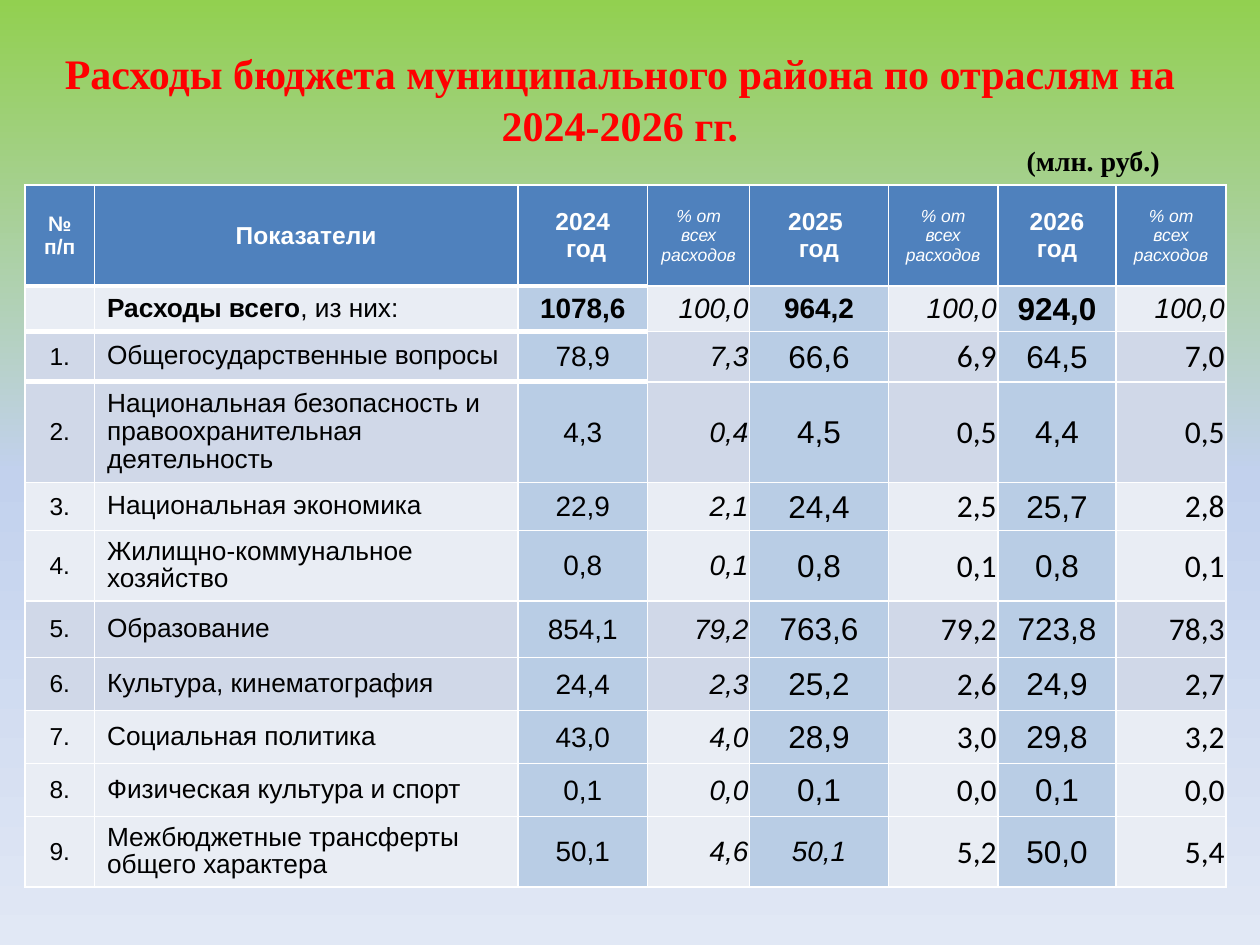
from dataclasses import dataclass
from copy import deepcopy

from lxml.etree import SubElement
from pptx import Presentation
from pptx.dml.color import RGBColor
from pptx.enum.text import MSO_ANCHOR as Anchor, PP_ALIGN as Align
from pptx.oxml.ns import qn
from pptx.util import Inches, Pt


@dataclass(frozen=True)
class Theme:
    sans: str = "Arial"
    serif: str = "Times New Roman"
    share_font: str = "Calibri"
    title: str = "FF0000"
    text: str = "000000"
    white: str = "FFFFFF"
    header: str = "4F81BD"
    year: str = "B9CDE5"
    light: str = "E9EDF4"
    dark: str = "D0D8E8"
    background: tuple = ((0, "92D050"), (0.5, "C2D1ED"), (1, "E1E8F5"))
    title_size: int = 24
    unit_size: int = 16
    number_head_size: int = 12
    head_size: int = 14
    share_head_size: int = 10
    number_size: int = 14
    name_size: int = 15
    value_size: int = 16
    large_size: int = 18


T = Theme()
COL_WIDTHS = [0.55, 3.36, 1.03, 0.81, 1.1, 0.87, 0.94, 0.87]
ROW_HEIGHTS = [0.8, 0.36, 0.4, 0.8, 0.38, 0.56, 0.45, 0.42, 0.42, 0.42, 0.56]
SHARE_HEAD = "% от всех расходов"
HEADER = ["№ п/п", "Показатели", "2024\n год", SHARE_HEAD,
          "2025 \nгод", SHARE_HEAD, "2026 год", SHARE_HEAD]
TOTAL = ["1078,6", "100,0", "964,2", "100,0", "924,0", "100,0"]
SECTORS = [
    ("Общегосударственные вопросы", "78,9", "7,3", "66,6", "6,9", "64,5", "7,0"),
    ("Национальная безопасность и правоохранительная деятельность",
     "4,3", "0,4", "4,5", "0,5", "4,4", "0,5"),
    ("Национальная экономика", "22,9", "2,1", "24,4", "2,5", "25,7", "2,8"),
    ("Жилищно-коммунальное хозяйство", "0,8", "0,1", "0,8", "0,1", "0,8", "0,1"),
    ("Образование", "854,1", "79,2", "763,6", "79,2", "723,8", "78,3"),
    ("Культура, кинематография", "24,4", "2,3", "25,2", "2,6", "24,9", "2,7"),
    ("Социальная политика", "43,0", "4,0", "28,9", "3,0", "29,8", "3,2"),
    ("Физическая культура и спорт", "0,1", "0,0", "0,1", "0,0", "0,1", "0,0"),
    ("Межбюджетные трансферты общего характера",
     "50,1", "4,6", "50,1", "5,2", "50,0", "5,4"),
]
DARK_ROWS = {2, 3, 6, 7}
THICK_EDGES = {1, 2, 3}  # rows whose top edge is thick
THICK_COLS = 3


def write(tf, text, size, font=T.sans, color=T.text, bold=False, italic=False,
          align=Align.LEFT, spacing=None, tail=""):
    """Fill a text frame, one paragraph a line; tail is a closing run that is not bold."""
    for i, line in enumerate(text.split("\n")):
        p = tf.add_paragraph() if i else tf.paragraphs[0]
        p.alignment = align
        if spacing:
            p.line_spacing = spacing
        for part, is_bold in ((line, bold), (tail, False)):
            if part:
                r = p.add_run()
                r.text = part
                r.font.name, r.font.size = font, Pt(size)
                r.font.bold, r.font.italic = is_bold, italic
                r.font.color.rgb = RGBColor.from_string(color)


def add_text(slide, text, left, top, width, height, **fmt):
    tf = slide.shapes.add_textbox(*map(Inches, (left, top, width, height))).text_frame
    tf.word_wrap = True
    write(tf, text, **fmt)


def paint_background(slide):
    fill = slide.background.fill
    fill.gradient()
    fill.gradient_angle = 270
    last = list(slide.element.iter(qn("a:gs")))[-1]
    last.addnext(deepcopy(last))
    for stop, (position, color) in zip(fill.gradient_stops, T.background):
        stop.position = position
        stop.color.rgb = RGBColor.from_string(color)


def set_borders(cell, top=1, bottom=1):
    tcPr = cell._tc.get_or_add_tcPr()
    for side, width in (("L", 1), ("R", 1), ("T", top), ("B", bottom)):
        ln = SubElement(tcPr, qn(f"a:ln{side}"), w=str(Pt(width)))
        SubElement(SubElement(ln, qn("a:solidFill")), qn("a:srgbClr"), val=T.white)


def style_cell(cell, row, col):
    thick = THICK_EDGES if col < THICK_COLS else ()
    set_borders(cell, 3 if row in thick else 1, 3 if row + 1 in thick else 1)
    is_year = col >= 2 and col % 2 == 0
    color = (T.header if row == 0 else T.year if is_year
             else T.dark if row in DARK_ROWS else T.light)
    cell.fill.solid()
    cell.fill.fore_color.rgb = RGBColor.from_string(color)
    cell.vertical_anchor = Anchor.MIDDLE
    if row and col != 1 and (col or row == 1):
        cell.margin_left = cell.margin_right = cell.margin_top = Inches(0.01)
        cell.margin_bottom = 0


def header_format(col):
    is_share = col >= 3 and col % 2
    size = (T.number_head_size if col == 0
            else T.share_head_size if is_share else T.head_size)
    return dict(size=size, color=T.white, bold=not is_share, italic=bool(is_share),
                align=Align.CENTER)


def value_format(row, col):
    is_share, is_total = col % 2 == 1, row == 1
    fmt = dict(size=T.large_size, align=Align.RIGHT if is_share else Align.CENTER)
    if is_total:
        fmt.update(size=T.large_size if col == 6 else T.value_size,
                   bold=not is_share, italic=is_share)
    elif col < 4:
        fmt.update(size=T.value_size, italic=is_share)
    elif (row, col) == (len(SECTORS) + 1, 4):
        fmt.update(size=T.value_size, italic=True)
    elif is_share:
        fmt.update(font=T.share_font)
    return fmt


def cell_format(row, col):
    if row == 0:
        return header_format(col)
    if col == 0:
        return dict(size=T.number_size, align=Align.CENTER)
    if col == 1:
        total = dict(bold=True, tail=", из них:") if row == 1 else {}
        return dict(size=T.name_size, spacing=0.95, **total)
    return value_format(row, col)


def add_budget_table(slide, left, top):
    rows = [HEADER, ["", "Расходы всего", *TOTAL]]
    rows += [[f"{n}.", *sector] for n, sector in enumerate(SECTORS, 1)]
    size = Inches(sum(COL_WIDTHS)), Inches(sum(ROW_HEIGHTS))
    table = slide.shapes.add_table(len(rows), len(HEADER),
                                   Inches(left), Inches(top), *size).table
    table.first_row = table.horz_banding = False
    for column, width in zip(table.columns, COL_WIDTHS):
        column.width = Inches(width)
    for i, (row, height) in enumerate(zip(rows, ROW_HEIGHTS)):
        table.rows[i].height = Inches(height)
        for j, text in enumerate(row):
            cell = table.cell(i, j)
            style_cell(cell, i, j)
            write(cell.text_frame, text, **cell_format(i, j))


def main():
    prs = Presentation()
    prs.slide_width, prs.slide_height = Inches(10), Inches(7.5)
    slide = prs.slides.add_slide(prs.slide_layouts[6])
    paint_background(slide)
    add_budget_table(slide, 0.2, 1.47)
    add_text(slide, "Расходы бюджета муниципального района по отраслям на 2024-2026 гг.",
             0, 0.31, 9.84, 0.47, size=T.title_size, font=T.serif, color=T.title,
             bold=True, align=Align.CENTER, spacing=1.04)
    add_text(slide, "(млн. руб.)", 8.05, 1.09, 1.72, 0.37,
             size=T.unit_size, font=T.serif, bold=True)
    prs.save("out.pptx")


if __name__ == "__main__":
    main()
